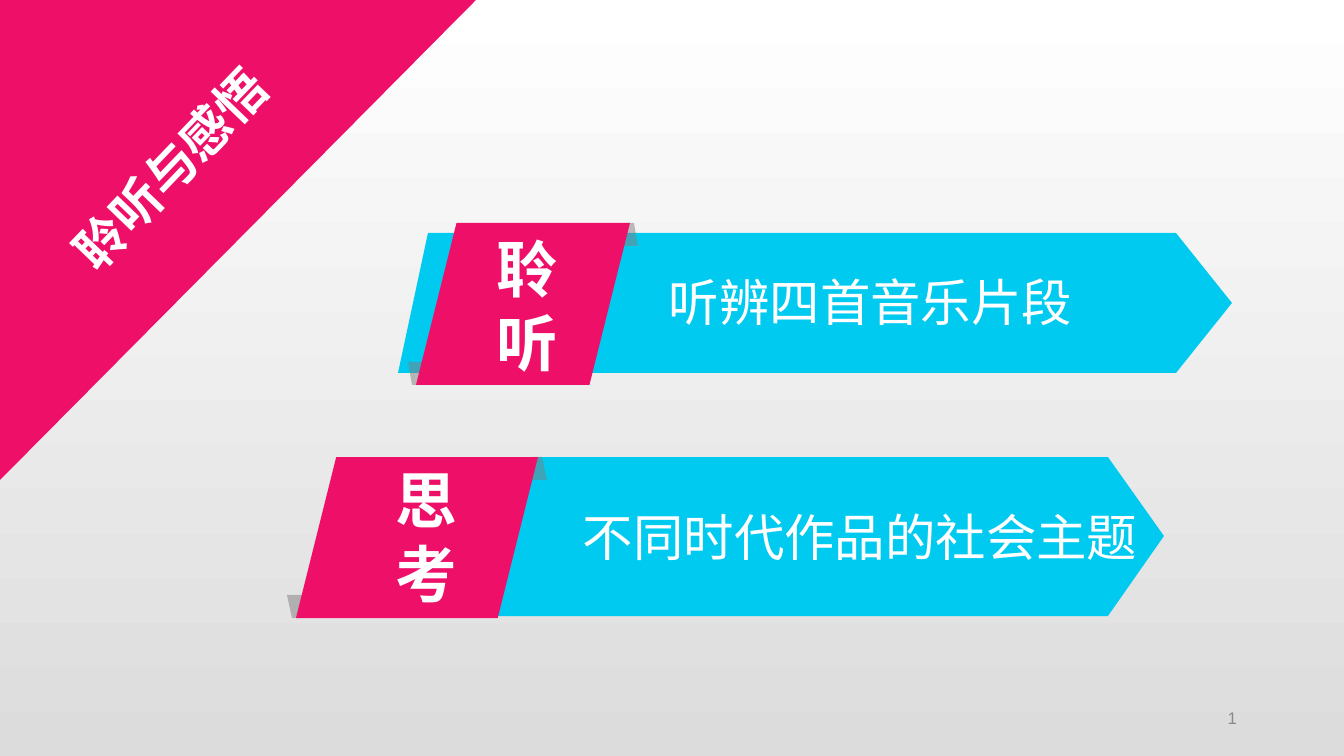
import pptx
import pptx.util
import pptx.dml.color
import pptx.enum.shapes
import pptx.enum.text
import pptx.oxml.ns
import lxml.etree

EMU_PER_PX = 12192000 / 1344
COLORS = {
    "pink": "EE0F68",
    "cyan": "00CAF0",
    "fold": "7F7F7F",
    "white": "FFFFFF",
    "silver": "DCDCDC",
    "number": "898989",
}
CJK_FONT = "Noto Sans CJK SC"
SHAPES = pptx.enum.shapes.MSO_SHAPE
ALIGN = pptx.enum.text.PP_ALIGN
ANCHOR = pptx.enum.text.MSO_ANCHOR

# Each banner: panel and arrow extents, fold width, label and caption
BANNERS = [
    {"panel": (416, 223, 214, 162), "arrow": (398, 233, 834, 140), "slant": 30,
     "fold": 16, "label": "聆听", "label_at": (456, 226, 142, 159),
     "caption": "听辨四首音乐片段", "caption_at": (659, 266, 543, 72)},
    {"panel": (296, 457, 242, 161), "arrow": (330, 457, 834, 159), "slant": 30,
     "fold": 18, "label": "思考", "label_at": (355, 457, 142, 159),
     "caption": "不同时代作品的社会主题", "caption_at": (573, 501, 639, 72)},
]


def px(value):
    return pptx.util.Emu(round(value * EMU_PER_PX))


def rgb(name):
    return pptx.dml.color.RGBColor.from_string(COLORS[name])


def paint(shape, color, alpha=None):
    shape.shadow.inherit = False
    shape.fill.solid()
    shape.fill.fore_color.rgb = rgb(color)
    shape.line.fill.background()
    if alpha is not None:
        tint = shape.fill._xPr.find(".//" + pptx.oxml.ns.qn("a:srgbClr"))
        lxml.etree.SubElement(tint, pptx.oxml.ns.qn("a:alpha"), val=str(alpha * 1000))


def add_preset(shapes, kind, at, color):
    shape = shapes.add_shape(kind, *map(px, at))
    paint(shape, color)
    return shape


def add_outline(shapes, points, color, alpha=None):
    builder = shapes.build_freeform(*points[0], scale=EMU_PER_PX)
    builder.add_line_segments(points[1:], close=True)
    paint(builder.convert_to_shape(), color, alpha)


def write(box, text, size, color="white", font=CJK_FONT, bold=False,
          align=ALIGN.LEFT, anchor=ANCHOR.TOP):
    frame = box.text_frame
    frame.word_wrap = True
    frame.vertical_anchor = anchor
    para = frame.paragraphs[0]
    para.alignment = align
    span = para.add_run()
    span.text = text
    span.font.size = pptx.util.Pt(size)
    span.font.bold = bold
    span.font.name = font
    span.font.color.rgb = rgb(color)
    # East Asian glyphs take their own typeface
    lxml.etree.SubElement(span.font._element, pptx.oxml.ns.qn("a:ea"), typeface=CJK_FONT)


def add_text(page, text, at, size, **text_format):
    box = page.shapes.add_textbox(*map(px, at))
    write(box, text, size, **text_format)


def add_banner(page, banner):
    shapes = page.shapes.add_group_shape().shapes

    # Arrow with a slanted tail
    left, top, width, height = banner["arrow"]
    right, bottom = left + width, top + height
    add_outline(shapes, [
        (left + banner["slant"], top), (right - 56, top), (right, top + height / 2),
        (right - 56, bottom), (left, bottom),
    ], "cyan")

    # Folds centred on two opposite corners of the panel
    left, top, width, height = banner["panel"]
    half = banner["fold"] / 2
    for corner, narrow, wide in ((left + width, top, top + 23),
                                 (left, top + height, top + height - 23)):
        add_outline(shapes, [
            (corner - half, wide), (corner - half / 2, narrow),
            (corner + half / 2, narrow), (corner + half, wide),
        ], "fold", alpha=50)

    panel = add_preset(shapes, SHAPES.PARALLELOGRAM, banner["panel"], "pink")
    panel.adjustments[0] = 0.25

    add_text(page, banner["caption"], banner["caption_at"], 36)
    add_text(page, banner["label"], banner["label_at"], 44, font="Arial",
             bold=True, align=ALIGN.CENTER)


def add_background(page):
    fill = page.background.fill
    fill.gradient()
    fill.gradient_angle = 270
    for stop, position, color in zip(fill.gradient_stops, (0, 1), ("white", "silver")):
        stop.position = position
        stop.color.rgb = rgb(color)


def add_title(page, text):
    title = page.shapes.title
    title.left, title.top, title.width, title.height = map(px, (-43, 133, 427, 72))
    title.rotation = 313.8
    write(title, text, 36, bold=True, align=ALIGN.CENTER)
    # Bring the title in front of the corner
    page.shapes._spTree.append(title._element)


def main():
    deck = pptx.Presentation()
    deck.slide_width, deck.slide_height = px(1344), px(756)
    page = deck.slides.add_slide(deck.slide_layouts[5])
    add_background(page)

    # Page number
    add_text(page, "1", (950, 700, 297, 35), 12, color="number", font="Arial",
             align=ALIGN.RIGHT, anchor=ANCHOR.MIDDLE)

    # Corner and title
    corner = add_preset(page.shapes, SHAPES.RIGHT_TRIANGLE, (-2, 2, 480, 476), "pink")
    corner.rotation = 90
    add_title(page, "聆听与感悟")

    for banner in BANNERS:
        add_banner(page, banner)
    deck.save("out.pptx")


if __name__ == "__main__":
    main()
